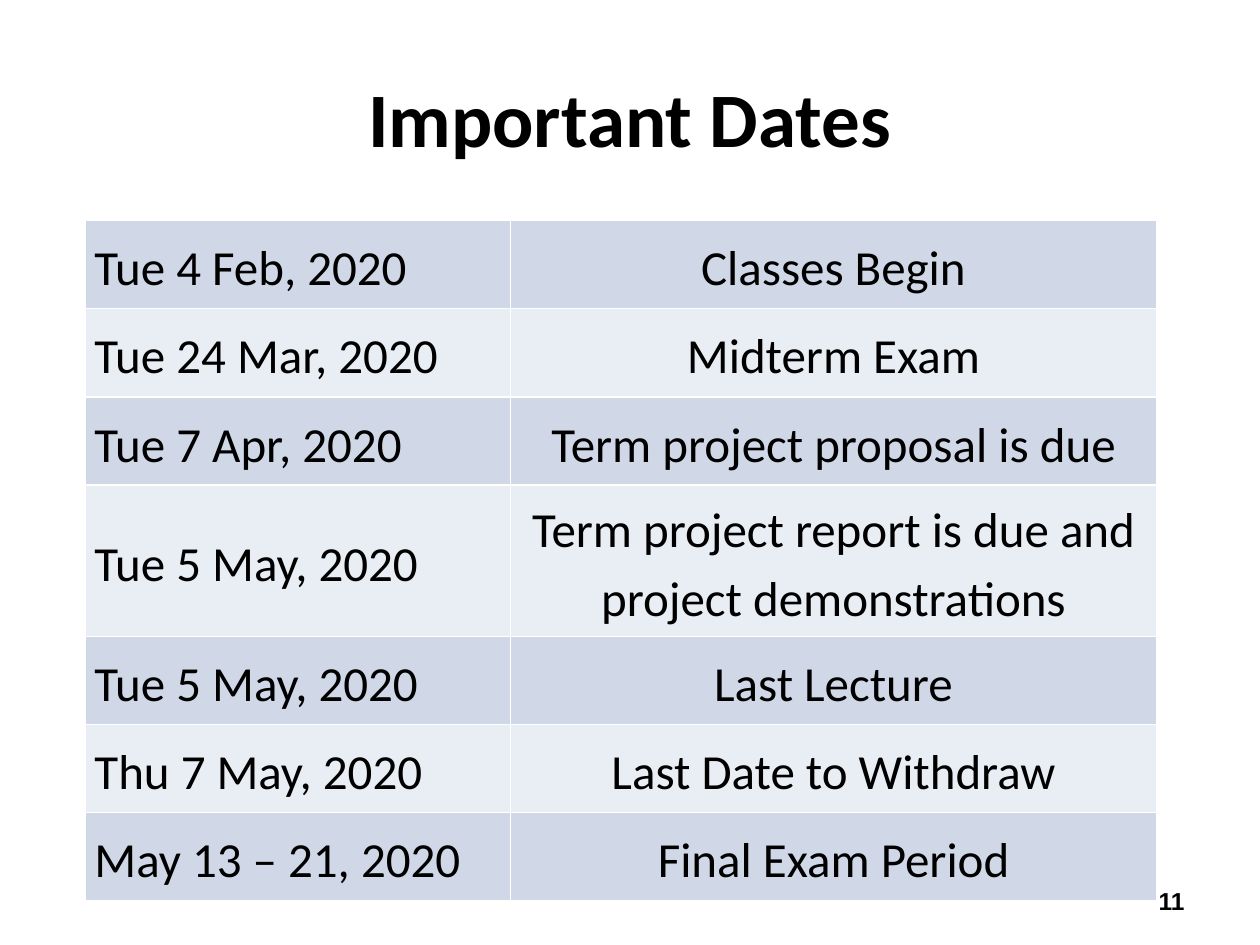
from lxml.etree import SubElement
from pptx import Presentation
from pptx.dml.color import RGBColor
from pptx.enum.text import MSO_ANCHOR, PP_ALIGN
from pptx.oxml.ns import qn
from pptx.util import Inches, Pt

# Content
TITLE = "Important Dates"
PAGE_NUMBER = "11"
DATES = [
    ("Tue 4 Feb, 2020", "Classes Begin"),
    ("Tue 24 Mar, 2020", "Midterm Exam"),
    ("Tue 7 Apr, 2020", "Term project proposal is due"),
    ("Tue 5 May, 2020", "Term project report is due and project demonstrations"),
    ("Tue 5 May, 2020", "Last Lecture"),
    ("Thu 7 May, 2020", "Last Date to Withdraw"),
    ("May 13 – 21, 2020", "Final Exam Period"),
]
COLUMN_WIDTHS = (3.37, 5.13)
COLUMN_ALIGNMENTS = (PP_ALIGN.LEFT, PP_ALIGN.CENTER)
ROW_HEIGHT, TALL_ROW_HEIGHT = 0.7, 1.2
LONG_TEXT = 30
BAND_FILLS = ("D0D8E8", "E9EDF4")
BORDER_COLOR = "FFFFFF"


def color(hex_string):
    return RGBColor.from_string(hex_string)


def write(frame, text, size, font_name, alignment, bold=False):
    frame.text = text
    frame.word_wrap = True
    frame.vertical_anchor = MSO_ANCHOR.MIDDLE
    para = frame.paragraphs[0]
    para.alignment = alignment
    font = para.runs[0].font
    font.size, font.name, font.bold = Pt(size), font_name, bold
    font.color.rgb = color("000000")
    return para


def add_borders(cell):
    properties = cell._tc.get_or_add_tcPr()
    for position, side in enumerate(("a:lnL", "a:lnR", "a:lnT", "a:lnB")):
        line = properties.makeelement(qn(side), {"w": str(Pt(1))})
        fill = SubElement(line, qn("a:solidFill"))
        SubElement(fill, qn("a:srgbClr"), val=BORDER_COLOR)
        properties.insert(position, line)


def place(shape, left, top, width, height):
    shape.left, shape.top = Inches(left), Inches(top)
    shape.width, shape.height = Inches(width), Inches(height)


deck = Presentation()
deck.slide_width, deck.slide_height = Inches(10), Inches(7.5)
page = deck.slides.add_slide(deck.slide_layouts[5])

# Title
title = page.shapes.title
place(title, 0.5, 0.3, 9, 1.25)
write(title.text_frame, TITLE, 44, "Calibri", PP_ALIGN.CENTER, bold=True)

# Table of dates
heights = [TALL_ROW_HEIGHT if len(event) > LONG_TEXT else ROW_HEIGHT
           for _, event in DATES]
table = page.shapes.add_table(
    len(DATES), len(COLUMN_WIDTHS), Inches(0.68), Inches(1.75),
    Inches(sum(COLUMN_WIDTHS)), Inches(sum(heights))).table
table.first_row = False
for column, width in zip(table.columns, COLUMN_WIDTHS):
    column.width = Inches(width)
for row_index, (row, height, entry) in enumerate(zip(table.rows, heights, DATES)):
    row.height = Inches(height)
    for cell, text, alignment in zip(row.cells, entry, COLUMN_ALIGNMENTS):
        para = write(cell.text_frame, text, 28, "Calibri", alignment)
        para.line_spacing = 1.15
        cell.vertical_anchor = MSO_ANCHOR.MIDDLE
        cell.margin_left = cell.margin_right = Inches(0.07)
        cell.margin_top = cell.margin_bottom = 0
        cell.fill.solid()
        cell.fill.fore_color.rgb = color(BAND_FILLS[row_index % 2])
        add_borders(cell)

# Page number
number_box = page.shapes.add_textbox(
    Inches(7.17), Inches(6.95), Inches(2.33), Inches(0.4))
write(number_box.text_frame, PAGE_NUMBER, 14, "Arial", PP_ALIGN.RIGHT, bold=True)

deck.save("out.pptx")
